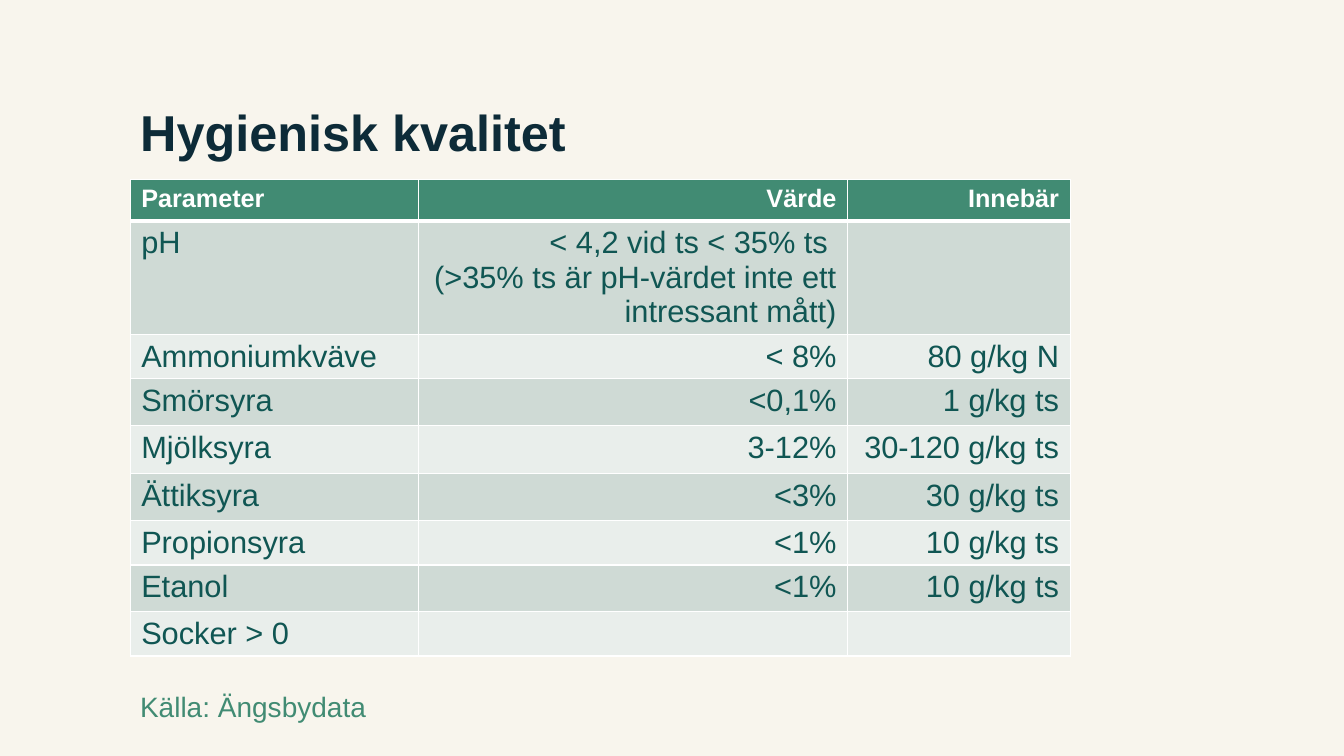
from lxml import etree
from pptx import Presentation
from pptx.dml.color import RGBColor
from pptx.enum.text import MSO_ANCHOR, MSO_AUTO_SIZE, PP_ALIGN
from pptx.oxml.ns import qn
from pptx.util import Cm, Pt

LEFT, RIGHT = PP_ALIGN.LEFT, PP_ALIGN.RIGHT
BOTTOM = MSO_ANCHOR.BOTTOM
NO_FIT, FIT_SHAPE = MSO_AUTO_SIZE.NONE, MSO_AUTO_SIZE.SHAPE_TO_FIT_TEXT
TITLE_ONLY = 5
FONT = "Arial"
CREAM, NAVY, GREEN, TEAL, WHITE = "F8F5ED", "0D2B38", "418B73", "105653", "FFFFFF"
BANDS = ["E9EEEB", "CFDAD5"]
MARGIN_LEFT = Cm(3.28)
COLUMN_WIDTHS = [7.26, 10.82, 5.61]
ROW_HEIGHTS = [1.04, 2.54, 1.09, 1.19, 1.19, 1.19, 1.04, 1.17, 0.99]
QUALITY_ROWS = [
    ("Parameter", "Värde", "Innebär"),
    ("pH", "< 4,2 vid ts < 35% ts \n(>35% ts är pH-värdet inte ett intressant mått)", ""),
    ("Ammoniumkväve", "< 8%", "80 g/kg N"),
    ("Smörsyra", "<0,1%", "1 g/kg ts"),
    ("Mjölksyra", "3-12%", "30-120 g/kg ts"),
    ("Ättiksyra", "<3%", "30 g/kg ts"),
    ("Propionsyra", "<1%", "10 g/kg ts"),
    ("Etanol", "<1%", "10 g/kg ts"),
    ("Socker > 0", "", ""),
]


def rgb(color):
    return RGBColor.from_string(color)


def write(frame, text, size, color, bold=False, align=LEFT):
    frame.text = text
    for paragraph in frame.paragraphs:
        paragraph.alignment = align
        font = paragraph.font
        font.name, font.size, font.bold = FONT, Pt(size), bold
        font.color.rgb = rgb(color)


def add_border(cell, side, width):
    line = etree.SubElement(cell._tc.get_or_add_tcPr(), qn("a:ln" + side), w=str(Pt(width)))
    fill = etree.SubElement(line, qn("a:solidFill"))
    etree.SubElement(fill, qn("a:srgbClr"), val=WHITE)


def format_cell(cell, text, row, column):
    header = row == 0
    for side in "LRTB":
        thick = (row, side) in ((0, "B"), (1, "T"))
        add_border(cell, side, 3 if thick else 1)
    cell.fill.solid()
    cell.fill.fore_color.rgb = rgb(GREEN if header else BANDS[row % 2])
    cell.margin_left = cell.margin_right = Cm(0.28)
    write(cell.text_frame, text, 18 if header else 22, WHITE if header else TEAL,
          header, RIGHT if column else LEFT)


def add_quality_table(slide):
    table = slide.shapes.add_table(
        len(QUALITY_ROWS), len(COLUMN_WIDTHS), MARGIN_LEFT, Cm(4.52),
        Cm(sum(COLUMN_WIDTHS)), Cm(sum(ROW_HEIGHTS))).table
    for column, width in zip(table.columns, COLUMN_WIDTHS):
        column.width = Cm(width)
    for row, height in zip(table.rows, ROW_HEIGHTS):
        row.height = Cm(height)
    for row, texts in enumerate(QUALITY_ROWS):
        for column, text in enumerate(texts):
            format_cell(table.cell(row, column), text, row, column)


def set_title(slide, text):
    title = slide.shapes.title
    title.left, title.top, title.width, title.height = MARGIN_LEFT, Cm(2.11), Cm(22.53), Cm(2.11)
    frame = title.text_frame
    frame.auto_size = NO_FIT
    frame.vertical_anchor = BOTTOM
    write(frame, text, 36, NAVY, bold=True)
    frame.paragraphs[0].line_spacing = 0.9


def add_credit(slide, text):
    frame = slide.shapes.add_textbox(MARGIN_LEFT, Cm(17.25), Cm(6.43), Cm(1.12)).text_frame
    frame.word_wrap = False
    frame.auto_size = FIT_SHAPE
    write(frame, text, 20, GREEN)


def main():
    deck = Presentation()
    deck.slide_width, deck.slide_height = Cm(33.87), Cm(19.05)
    slide = deck.slides.add_slide(deck.slide_layouts[TITLE_ONLY])
    background = slide.background.fill
    background.solid()
    background.fore_color.rgb = rgb(CREAM)
    add_quality_table(slide)
    set_title(slide, "Hygienisk kvalitet")
    add_credit(slide, "Källa: Ängsbydata")
    deck.save("out.pptx")


if __name__ == "__main__":
    main()
